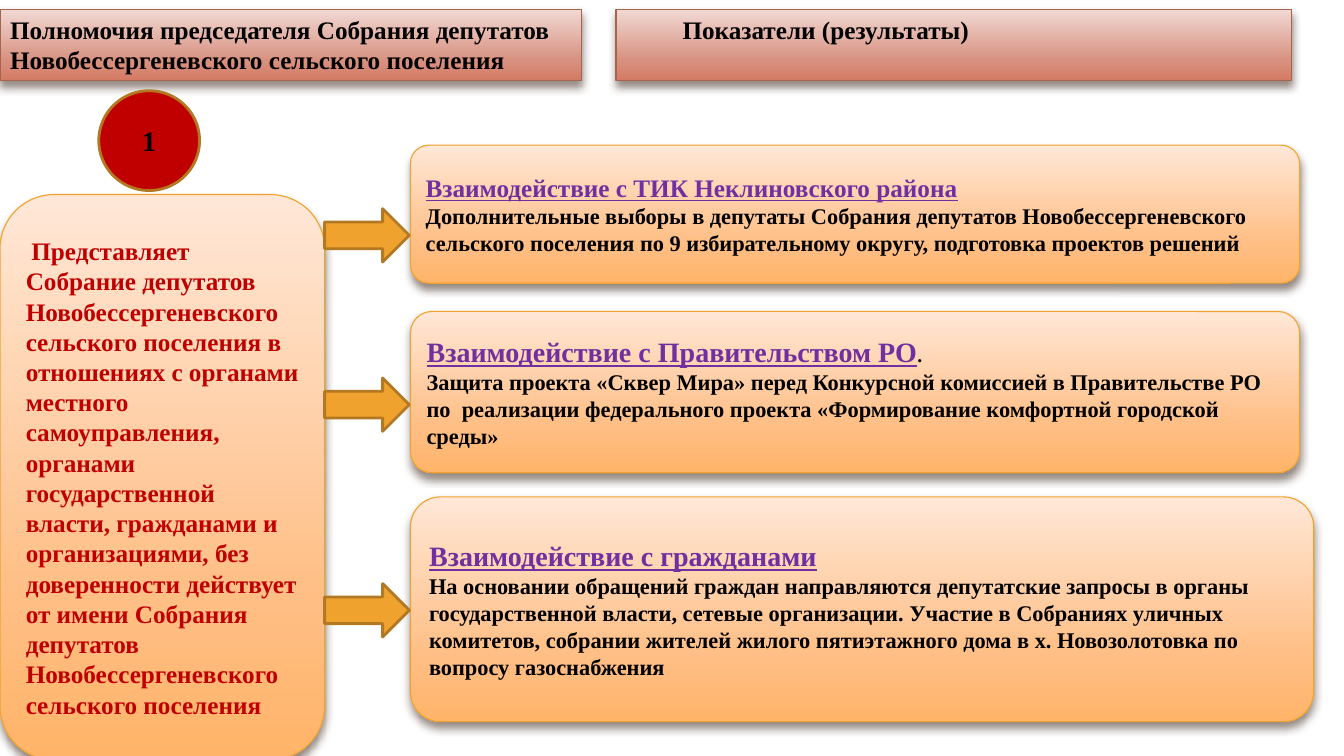
from pptx import Presentation, util as u, oxml
from pptx.dml.color import RGBColor
from pptx.enum import shapes, text
from pptx.oxml import ns

KIND = shapes.MSO_SHAPE
PEACH = [(0, "FFE7D7"), (72, "FFBE84"), (100, "FFB468")]
BRICK = [(0, "F1D9D4"), (72, "D89180"), (100, "D47A62")]
RED, GOLD, BROWN = "C00000", "F0A22E", "B27822"
BLACK, PURPLE = "000000", "7030A0"


def hue(code):
    return RGBColor.from_string(code)


def write(para, words, size=18, color=BLACK, under=False):
    run = para.add_run()
    run.text = words
    font = run.font
    font.name, font.size, font.bold = "Times New Roman", u.Pt(size), True
    font.underline = under
    font.color.rgb = hue(color)


class Page:
    wide, high = 133.3, 75
    cell = u.Inches(0.1)

    def __init__(self, deck):
        deck.slide_width = int(self.wide * self.cell)
        deck.slide_height = int(self.high * self.cell)
        self.slide = deck.slides.add_slide(deck.slide_layouts[5])

    def grid(self, *spots):
        return [int(spot * self.cell) for spot in spots]

    def shape(self, kind, *spots):
        item = self.slide.shapes.add_shape(kind, *self.grid(*spots))
        item.shadow.inherit = False
        return item

    def flat(self, kind, *spots, fill=GOLD):
        item = self.shape(kind, *spots)
        item.fill.solid()
        item.fill.fore_color.rgb = hue(fill)
        item.line.color.rgb = hue(BROWN)
        item.line.width = u.Pt(2)
        return item

    def shade(self, item, stops, edge):
        item.line.color.rgb = hue(edge)
        item.line.width = u.Pt(0.79)
        item.fill.gradient()
        item.fill.gradient_angle = 270
        props = item._element.spPr
        ramp = props.find(ns.qn("a:gradFill")).find(ns.qn("a:gsLst"))
        marks = "".join(f'<a:gs pos="{pos * 1000}"><a:srgbClr val="{code}"/></a:gs>'
                        for pos, code in stops)
        ramp.getparent().replace(ramp, oxml.parse_xml(
            f'<a:gsLst {ns.nsdecls("a")}>{marks}</a:gsLst>'))
        for old in props.findall(ns.qn("a:effectLst")):
            props.remove(old)
        props.append(oxml.parse_xml(
            f'<a:effectLst {ns.nsdecls("a")}><a:outerShdw blurRad="{u.Pt(6)}" '
            f'dist="{u.Pt(4)}" dir="5400000" rotWithShape="0"><a:srgbClr val="4E3B30">'
            '<a:alpha val="60000"/></a:srgbClr></a:outerShdw></a:effectLst>'))

    def frame(self, item, lines, anchor="MIDDLE", align="LEFT"):
        body = item.text_frame
        body.word_wrap = True
        body.auto_size = text.MSO_AUTO_SIZE.NONE
        body.vertical_anchor = text.MSO_ANCHOR[anchor]
        for num, runs in enumerate(lines):
            para = body.add_paragraph() if num else body.paragraphs[0]
            para.alignment = text.PP_ALIGN[align]
            for words, form in runs:
                write(para, words, **form)

    def head(self, item, words, pad=1):
        self.shade(item, BRICK, "A5644E")
        self.frame(item, [[(words, {})]], anchor="TOP")
        item.text_frame.margin_left = self.grid(pad)[0]

    def title(self, words, *spots):
        item = self.slide.shapes.title
        item.left, item.top, item.width, item.height = self.grid(*spots)
        self.head(item, words)

    def label(self, words, *spots, pad):
        self.head(self.shape(KIND.RECTANGLE, *spots), words, pad)

    def badge(self, words, *spots):
        item = self.flat(KIND.OVAL, *spots, fill=RED)
        self.frame(item, [[(words, dict(size=20))]], align="CENTER")

    def card(self, lines, *spots, bend=0.134):
        item = self.shape(KIND.ROUNDED_RECTANGLE, *spots)
        item.adjustments[0] = bend
        self.shade(item, PEACH, GOLD)
        self.frame(item, lines)

    def arrow(self, top):
        self.flat(KIND.RIGHT_ARROW, 32.2, top, 8.4, 5.3)


DUTY = ("Представляет Собрание депутатов Новобессергеневского сельского поселения "
        "в отношениях с органами местного самоуправления, органами государственной "
        "власти, гражданами и организациями, без доверенности действует от имени "
        "Собрания депутатов Новобессергеневского сельского поселения")
RESULTS = [
    ("Взаимодействие с ТИК Неклиновского района", 18, "",
     "Дополнительные выборы в депутаты Собрания депутатов Новобессергеневского "
     "сельского поселения по 9 избирательному округу, подготовка проектов решений",
     14.4, 88.2, 13.7, 20.7),
    ("Взаимодействие с Правительством РО", 20, ".",
     "Защита проекта «Сквер Мира» перед Конкурсной комиссией в Правительстве РО "
     "по  реализации федерального проекта «Формирование комфортной городской среды»",
     30.9, 88.2, 16, 37.5),
    ("Взаимодействие с гражданами", 20, "",
     "На основании обращений граждан направляются депутатские запросы в органы "
     "государственной власти, сетевые организации. Участие в Собраниях уличных "
     "комитетов, собрании жителей жилого пятиэтажного дома в х. Новозолотовка по "
     "вопросу газоснабжения",
     49.3, 89.6, 22.3, 57.9),
]


def main():
    deck = Presentation()
    page = Page(deck)
    page.title("Полномочия председателя Собрания депутатов "
               "Новобессергеневского сельского поселения", 0, 0.9, 57.7, 7.1)
    page.label("Показатели (результаты)", 61.1, 0.9, 67, 7.1, pad=6.6)
    page.badge("1", 9.8, 9, 10, 9.9)
    page.card([[(" ", dict(size=16, color=RED)), (DUTY, dict(color=RED))]],
              0, 19.3, 32.2, 56.1, bend=0.167)
    for name, size, stop, note, top, wide, high, mark in RESULTS:
        first = [(name, dict(size=size, color=PURPLE, under=True))]
        if stop:
            first.append((stop, dict(size=14)))
        page.card([first, [(note, dict(size=16))]], 40.7, top, wide, high)
        page.arrow(mark)
    deck.save("out.pptx")


if __name__ == "__main__":
    main()
